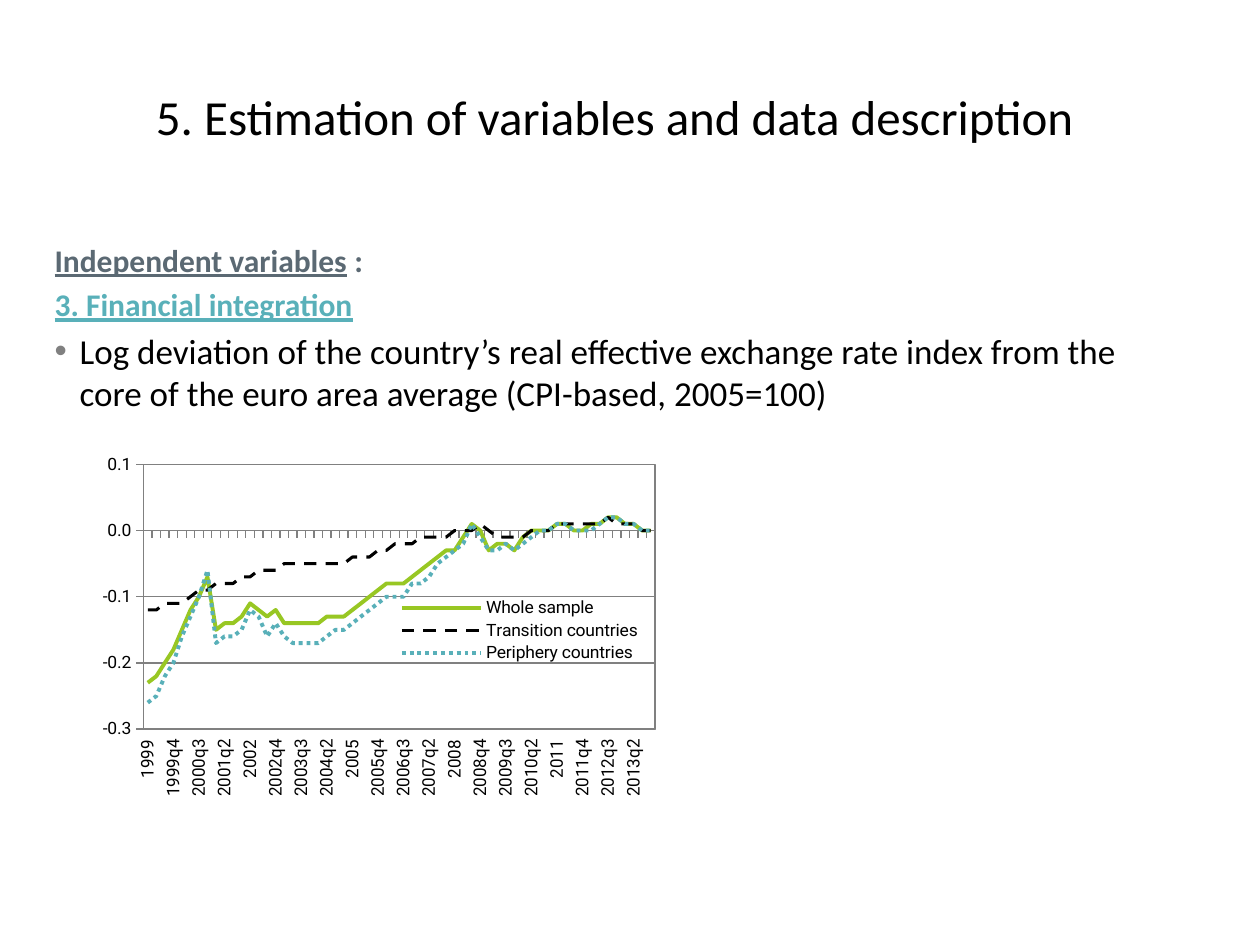
from dataclasses import dataclass

from lxml import etree
from pptx import Presentation, util as u
from pptx.chart.data import CategoryChartData
from pptx.dml.color import RGBColor as Rgb
from pptx.enum import chart as ch, dml, text
from pptx.oxml.ns import qn

PX = 914400 / 126


@dataclass
class Theme:
    font: str = "Calibri"
    plot: str = "Roboto"
    black: Rgb = Rgb(0, 0, 0)
    slate: Rgb = Rgb(0x5B, 0x69, 0x73)
    teal: Rgb = Rgb(0x59, 0xB0, 0xB9)
    green: Rgb = Rgb(0x98, 0xC7, 0x23)
    gray: Rgb = Rgb(0x80, 0x80, 0x80)
    title: int = 28
    head: int = 18
    body: int = 20
    label: int = 10


def place(shape, *box):
    shape.left, shape.top, shape.width, shape.height = (round(n * PX) for n in box)


def lay(part, **sizes):
    """Set a manual layout, in shares of the chart, on a plot area or legend."""
    for old in part.findall(qn("c:layout")):
        part.remove(old)
    frame = etree.Element(qn("c:layout"))
    man = etree.SubElement(frame, qn("c:manualLayout"))
    if part.tag == qn("c:plotArea"):
        etree.SubElement(man, qn("c:layoutTarget")).set("val", "inner")
    for key in ("xMode", "yMode"):
        etree.SubElement(man, qn("c:" + key)).set("val", "edge")
    for key, val in sizes.items():
        etree.SubElement(man, qn("c:" + key)).set("val", str(val))
    pos = part.find(qn("c:legendPos"))
    if pos is None:
        part.insert(0, frame)
    else:
        pos.addnext(frame)


th = Theme()
prs = Presentation()
prs.slide_width, prs.slide_height = u.Inches(10), u.Inches(7.5)
slide = prs.slides.add_slide(prs.slide_layouts[1])

# Body
body = slide.placeholders[1]
place(body, 42, -21, 1134, 777)
frame = body.text_frame
frame.auto_size = text.MSO_AUTO_SIZE.NONE
frame.vertical_anchor = text.MSO_ANCHOR.TOP
frame.margin_top = round(262 * PX)
lines = [
    (["Independent variables", " :"], th.head, th.slate, True),
    (["3. Financial integration"], th.head, th.teal, True),
    (["Log deviation of the country’s real effective exchange rate index from the "
      "core of the euro area average (CPI-based, 2005=100)"], th.body, th.black, False),
]
for i, (runs, size, color, head) in enumerate(lines):
    para = frame.paragraphs[0] if i == 0 else frame.add_paragraph()
    prop = para._p.get_or_add_pPr()
    prop.set("marL", str(round(25 * PX)))
    prop.set("indent", str(round(-25 * PX)))
    if i == 0:
        para.space_before = u.Pt(0)
    if head:
        etree.SubElement(prop, qn("a:buNone"))
    else:
        tint = etree.SubElement(prop, qn("a:buClr"))
        etree.SubElement(tint, qn("a:srgbClr")).set("val", str(th.gray))
        etree.SubElement(prop, qn("a:buChar")).set("char", "•")
    font = para.font
    font.name, font.size, font.bold = th.font, u.Pt(size), head
    font.color.rgb = color
    for j, words in enumerate(runs):
        run = para.add_run()
        run.text = words
        if head:
            run.font.underline = j == 0

# Chart
cents = {
    "Whole sample": [
        -23, -22, -20, -18, -15, -12, -10, -7, -15, -14, -14, -13, -11, -12, -13,
        -12, -14, -14, -14, -14, -14, -13, -13, -13, -12, -11, -10, -9, -8, -8,
        -8, -7, -6, -5, -4, -3, -3, -1, 1, 0, -3, -2, -2, -3, -1,
        0, 0, 0, 1, 1, 0, 0, 1, 1, 2, 2, 1, 1, 0, 0],
    "Transition countries": [
        -12, -12, -11, -11, -11, -10, -9, -9, -8, -8, -8, -7, -7, -6, -6,
        -6, -5, -5, -5, -5, -5, -5, -5, -5, -4, -4, -4, -3, -3, -2,
        -2, -2, -1, -1, -1, -1, 0, 0, 0, 1, 0, -1, -1, -1, -1,
        0, 0, 0, 1, 1, 1, 1, 1, 1, 2, 1, 1, 1, 0, 0],
    "Periphery countries": [
        -26, -25, -22, -20, -16, -13, -10, -6, -17, -16, -16, -15, -12, -13, -16,
        -14, -16, -17, -17, -17, -17, -16, -15, -15, -14, -13, -12, -11, -10, -10,
        -10, -8, -8, -7, -5, -4, -3, -2, 1, -1, -3, -3, -2, -3, -2,
        -1, 0, 0, 1, 1, 0, 0, 0, 1, 2, 2, 1, 1, 0, 0],
}
data = CategoryChartData(number_format="#,##0.0")
data.categories = [f"{year}{q}" for year in range(1999, 2014)
                   for q in ("", "q2", "q3", "q4")]
for name, vals in cents.items():
    data.add_series(name, [v / 100 for v in vals])
holder = slide.shapes.add_chart(ch.XL_CHART_TYPE.LINE, 0, 0, 1, 1, data)
place(holder, 73, 451, 588, 346)
chart = holder.chart
chart.has_title = False
chart.font.name, chart.font.size = th.plot, u.Pt(th.label)
chart.font.color.rgb = th.black
chart.plots[0].vary_by_categories = False

dash = dml.MSO_LINE
styles = [(th.green, 2.25, dash.SOLID), (th.black, 1.75, dash.DASH),
          (th.teal, 2.25, dash.ROUND_DOT)]
for series, (color, width, kind) in zip(chart.plots[0].series, styles):
    series.smooth = False
    series.marker.style = ch.XL_MARKER_STYLE.NONE
    line = series.format.line
    line.color.rgb, line.width, line.dash_style = color, u.Pt(width), kind

cat, val = chart.category_axis, chart.value_axis
val.minimum_scale, val.maximum_scale, val.major_unit = -0.3, 0.1, 0.1
val.tick_labels.number_format = "#,##0.0"
val.tick_labels.number_format_is_linked = False
val.has_major_gridlines = True
cat.tick_label_position = ch.XL_TICK_LABEL_POSITION.LOW
for axis in (cat, val):
    axis.major_tick_mark = ch.XL_TICK_MARK.OUTSIDE
for part in (cat, val, val.major_gridlines):
    part.format.line.color.rgb = th.gray
    part.format.line.width = u.Pt(0.75)
cat.tick_labels.font.size = u.Pt(th.label)
cat._element.find(qn("c:txPr")).find(qn("a:bodyPr")).set("rot", "-5400000")
step = etree.Element(qn("c:tickLblSkip"))
step.set("val", "3")
cat._element.find(qn("c:noMultiLvlLbl")).addprevious(step)

area = chart._chartSpace.chart.plotArea
lay(area, x=0.12, y=0.04, w=0.87, h=0.79)
prop = etree.SubElement(area, qn("c:spPr"))
etree.SubElement(prop, qn("a:noFill"))
edge = etree.SubElement(prop, qn("a:ln"), w="9525")
fill = etree.SubElement(edge, qn("a:solidFill"))
etree.SubElement(fill, qn("a:srgbClr")).set("val", str(th.gray))

chart.has_legend = True
chart.legend.position = ch.XL_LEGEND_POSITION.RIGHT
chart.legend.include_in_layout = False
lay(chart.legend._element, x=0.55, y=0.43, w=0.42, h=0.21)

# Title
title = slide.shapes.title
place(title, 63, 63, 1103, 105)
title.text_frame.vertical_anchor = text.MSO_ANCHOR.MIDDLE
para = title.text_frame.paragraphs[0]
para.text = "5. Estimation of variables and data description"
para.alignment = text.PP_ALIGN.CENTER
para.font.name, para.font.size = th.font, u.Pt(th.title)
para.font.color.rgb = th.black

prs.save("out.pptx")
